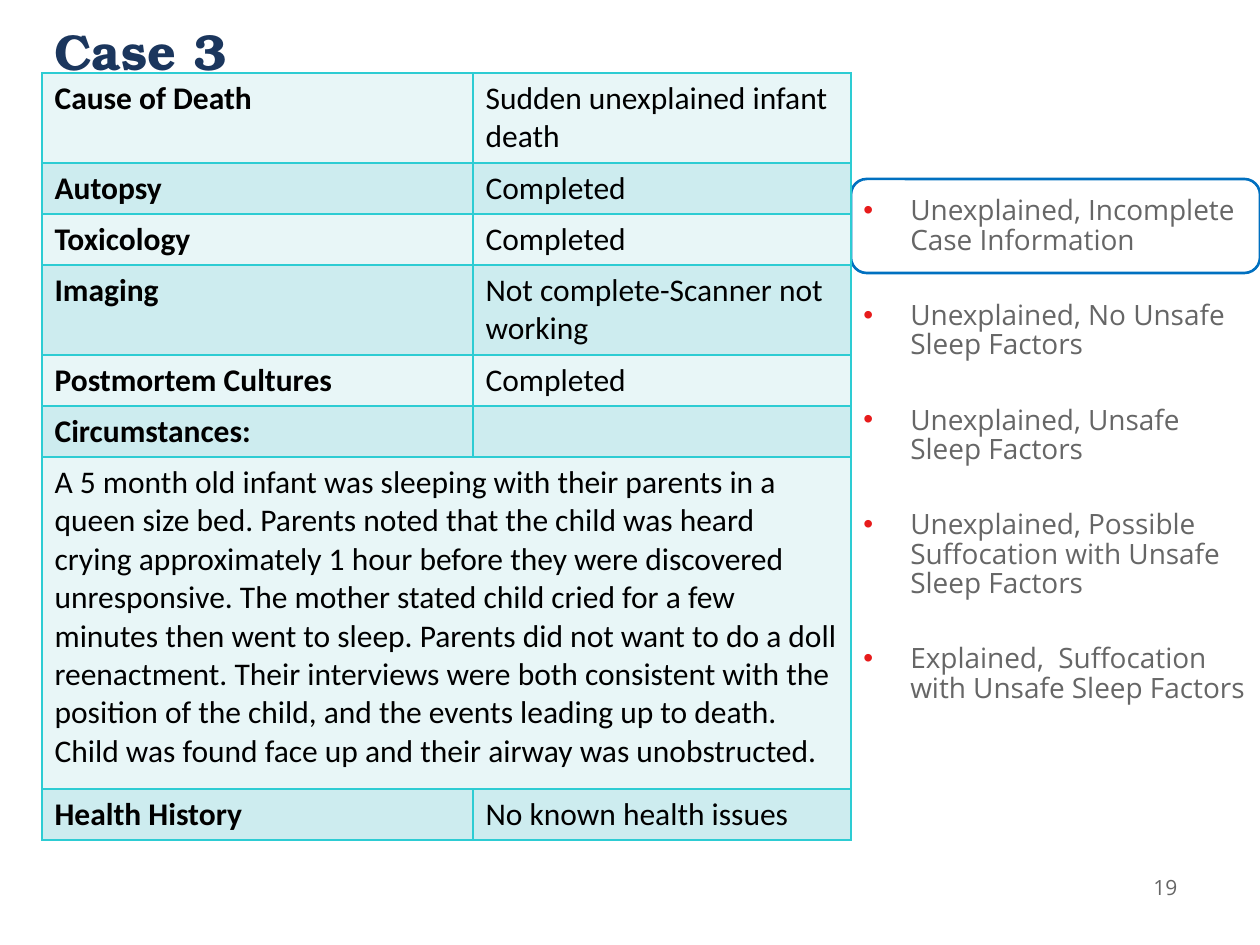
from pptx import Presentation
from pptx.dml.color import RGBColor
from pptx.enum.shapes import MSO_SHAPE
from pptx.enum.text import MSO_ANCHOR, MSO_AUTO_SIZE, PP_ALIGN
from pptx.oxml import parse_xml
from pptx.oxml.ns import nsdecls
from pptx.util import Emu, Pt

ROUNDED = MSO_SHAPE.ROUNDED_RECTANGLE
MIDDLE, TOP = MSO_ANCHOR.MIDDLE, MSO_ANCHOR.TOP
LEFT, CENTER = PP_ALIGN.LEFT, PP_ALIGN.CENTER
NO_FIT = MSO_AUTO_SIZE.NONE
TITLE_ONLY = 5

NAVY, GREY, BLACK = "1B365D", "666666", "000000"
BLUE, RED, TEAL = "0070C0", "E71B1B", "2DCCD3"
BANDS = ("E8F6F7", "CDECEF")

COLUMNS = (431, 378)
STORY = (
    "A 5 month old infant was sleeping with their parents in a queen size bed. "
    "Parents noted that the child was heard crying approximately 1 hour before "
    "they were discovered unresponsive. The mother stated child cried for a few "
    "minutes then went to sleep. Parents did not want to do a doll reenactment. "
    "Their interviews were both consistent with the position of the child, and "
    "the events leading up to death. Child was found face up and their airway "
    "was unobstructed."
)
# Row height, then one text per cell; a single text spans the row
CASE_ROWS = [
    (90, "Cause of Death", "Sudden unexplained infant death"),
    (51, "Autopsy", "Completed"),
    (51, "Toxicology", "Completed"),
    (90, "Imaging", "Not complete-Scanner not working"),
    (51, "Postmortem Cultures", "Completed"),
    (51, "Circumstances:", ""),
    (332, STORY),
    (51, "Health History", "No known health issues"),
]
CATEGORIES = [
    "Unexplained, Incomplete Case Information",
    "Unexplained, No Unsafe Sleep Factors",
    "Unexplained, Unsafe Sleep Factors",
    "Unexplained, Possible Suffocation with Unsafe Sleep Factors",
    "Explained,  Suffocation with Unsafe Sleep Factors",
]


def px(length):
    return Emu(round(length * 914400 / 126))


def color(value):
    return RGBColor.from_string(value)


class CasePage:
    body_font = "Open Sans"
    title_font = "TeX Gyre Bonum"
    table_font = "Calibri"

    def __init__(self, deck):
        self.page = deck.slides.add_slide(deck.slide_layouts[TITLE_ONLY])
        self.shapes = self.page.shapes

    def style(self, para, name, size, value, bold=False):
        font = para.font
        font.name, font.size, font.bold = name, Pt(size), bold
        font.color.rgb = color(value)

    def title(self, text, left, top, width, height):
        box = self.shapes.title
        box.left, box.top, box.width, box.height = map(px, (left, top, width, height))
        frame = box.text_frame
        frame.text = text
        frame.auto_size, frame.vertical_anchor = NO_FIT, MIDDLE
        para = frame.paragraphs[0]
        para.alignment = LEFT
        self.style(para, self.title_font, 28.8, NAVY, True)

    def outline(self, left, top, width, height):
        box = self.shapes.add_shape(ROUNDED, *map(px, (left, top, width, height)))
        box.shadow.inherit = False
        box.fill.background()
        box.line.color.rgb = color(BLUE)
        box.line.width = Pt(1.5)

    def text_box(self, left, top, width, height, anchor):
        box = self.shapes.add_textbox(*map(px, (left, top, width, height)))
        frame = box.text_frame
        frame.word_wrap, frame.vertical_anchor = True, anchor
        return frame

    def number(self, text, left, top, width, height):
        para = self.text_box(left, top, width, height, MIDDLE).paragraphs[0]
        para.text, para.alignment = text, CENTER
        self.style(para, self.body_font, 12, GREY)

    def bullets(self, items, left, top, width, height):
        frame = self.text_box(left, top, width, height, TOP)
        for index, item in enumerate(items):
            para = frame.paragraphs[0] if index == 0 else frame.add_paragraph()
            para.text = item
            props = para._p.get_or_add_pPr()
            props.set("marL", str(px(47)))
            props.set("indent", str(-px(47)))
            for xml in (
                f'<a:buClr {nsdecls("a")}><a:srgbClr val="{RED}"/></a:buClr>',
                f'<a:buFont {nsdecls("a")} typeface="Arial"/>',
                f'<a:buChar {nsdecls("a")} char="•"/>',
            ):
                props.append(parse_xml(xml))
            para.line_spacing = 0.88
            if index:
                para.space_before = Pt(26)
            self.style(para, self.body_font, 16, GREY)

    def cell(self, cell, text, fill, bold):
        cell.fill.solid()
        cell.fill.fore_color.rgb = color(fill)
        props = cell._tc.get_or_add_tcPr()
        for index, side in enumerate(("lnL", "lnR", "lnT", "lnB")):
            props.insert(index, parse_xml(
                f'<a:{side} {nsdecls("a")} w="{Pt(1)}"><a:solidFill>'
                f'<a:srgbClr val="{TEAL}"/></a:solidFill></a:{side}>'))
        para = cell.text_frame.paragraphs[0]
        para.text = text
        self.style(para, self.table_font, 18, BLACK, bold)

    def table(self, rows, columns, left, top):
        size = sum(columns), sum(row[0] for row in rows)
        frame = self.shapes.add_table(
            len(rows), len(columns), *map(px, (left, top, *size)))
        table = frame.table
        table.first_row = table.horz_banding = False
        for column, width in zip(table.columns, columns):
            column.width = px(width)
        for r, (height, *texts) in enumerate(rows):
            table.rows[r].height = px(height)
            spans = len(texts) == 1
            if spans:
                table.cell(r, 0).merge(table.cell(r, len(columns) - 1))
                texts.append("")
            for c, text in enumerate(texts):
                self.cell(table.cell(r, c), text, BANDS[r % 2], c == 0 and not spans)


def main():
    deck = Presentation()
    deck.slide_width, deck.slide_height = px(1260), px(945)
    page = CasePage(deck)

    # Heading and page number
    page.number("19", 1134, 861, 63, 53)
    page.title("Case 3", 42, 21, 1134, 58)

    # Highlighted answer behind the case table
    page.outline(851, 179, 409, 94)
    page.table(CASE_ROWS, COLUMNS, 42, 73)

    # Possible classifications
    page.bullets(CATEGORIES, 851, 191, 415, 577)

    deck.save("out.pptx")


if __name__ == "__main__":
    main()
